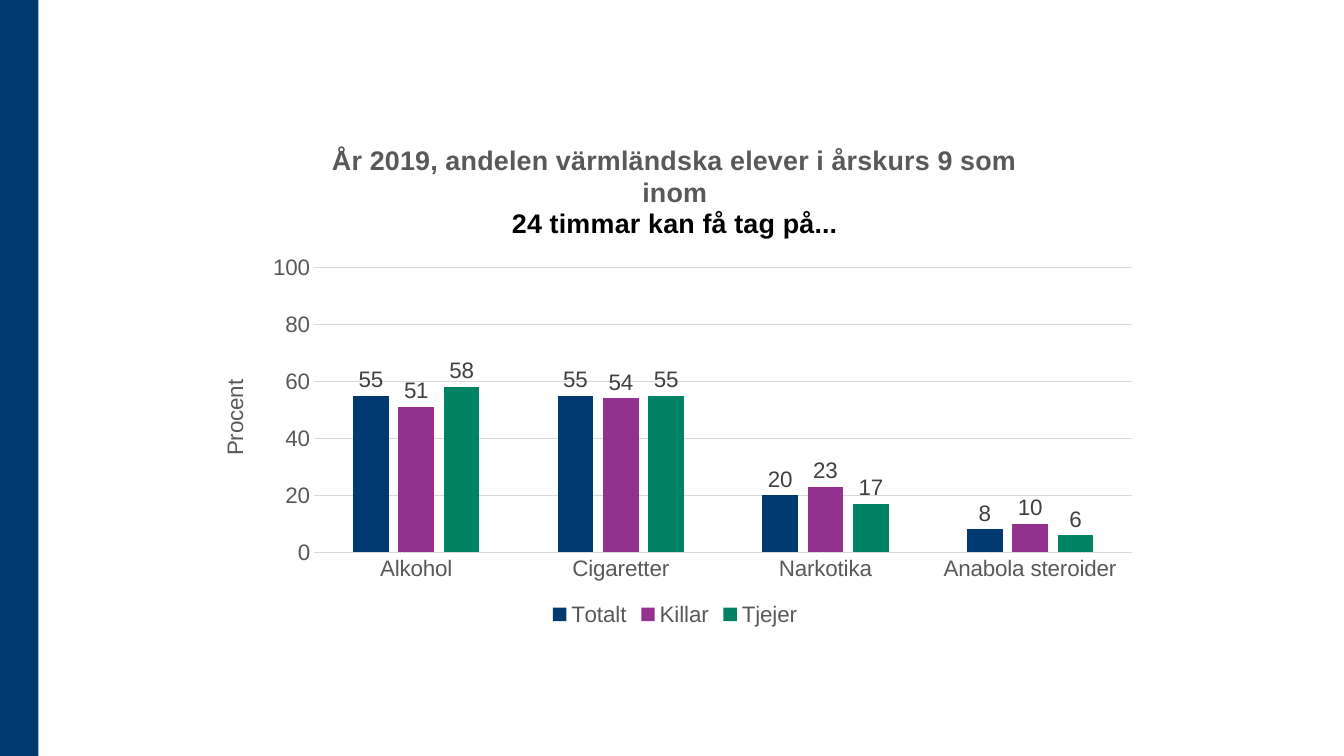
from pptx import Presentation
from pptx.chart import data as chart_data
from pptx.dml import color
from pptx.enum import chart as ch, shapes
from pptx.util import Inches, Pt

NAVY, PURPLE, GREEN = "003A70", "93328E", "008264"
GREY, DARK, PALE, BLACK = "595959", "404040", "D9D9D9", "000000"
CATEGORIES = ["Alkohol", "Cigaretter", "Narkotika", "Anabola steroider"]
SERIES = [
    ("Totalt", NAVY, (55, 55, 20, 8)),
    ("Killar", PURPLE, (51, 54, 23, 10)),
    ("Tjejer", GREEN, (58, 55, 17, 6)),
]


def rgb(value):
    return color.RGBColor.from_string(value)


def style_font(font, size=16, fill=GREY, bold=False):
    font.name = "Arial"
    font.size = Pt(size)
    font.bold = bold
    font.color.rgb = rgb(fill)


def add_text(p, content, **fmt):
    r = p.add_run()
    r.text = content
    style_font(r.font, **fmt)


def set_line(line, fill=PALE):
    line.color.rgb = rgb(fill)
    line.width = Pt(0.75)


def add_side_band(s):
    sp = s.shapes.add_shape(
        shapes.MSO_SHAPE.RECTANGLE, 0, 0, Inches(0.38), Inches(7.5))
    sp.shadow.inherit = False
    sp.fill.solid()
    sp.fill.fore_color.rgb = rgb(NAVY)
    sp.line.fill.background()


def add_title(chart):
    tf = chart.chart_title.text_frame
    add_text(tf.paragraphs[0],
             "År 2019, andelen värmländska elever i årskurs 9 som inom",
             size=19.2, bold=True)
    add_text(tf.add_paragraph(), "24 timmar kan få tag på...",
             size=19.2, fill=BLACK, bold=True)
    chart.chart_title.include_in_layout = False


def style_axes(chart):
    for axis in (chart.category_axis, chart.value_axis):
        axis.major_tick_mark = ch.XL_TICK_MARK.NONE
        axis.minor_tick_mark = ch.XL_TICK_MARK.NONE
        style_font(axis.tick_labels.font)
    set_line(chart.category_axis.format.line)
    values = chart.value_axis
    values.minimum_scale = 0
    values.maximum_scale = 100
    values.major_unit = 20
    values.format.line.fill.background()
    set_line(values.major_gridlines.format.line)
    add_text(values.axis_title.text_frame.paragraphs[0], "Procent")


def style_series(series, fill):
    series.format.fill.solid()
    series.format.fill.fore_color.rgb = rgb(fill)
    series.invert_if_negative = False
    labels = series.data_labels
    labels.show_value = True
    labels.position = ch.XL_LABEL_POSITION.OUTSIDE_END
    style_font(labels.font, fill=DARK)


def add_legend(chart):
    chart.has_legend = True
    chart.legend.position = ch.XL_LEGEND_POSITION.BOTTOM
    chart.legend.include_in_layout = False
    style_font(chart.legend.font)


def add_access_chart(s):
    data = chart_data.CategoryChartData()
    data.categories = CATEGORIES
    for name, _, values in SERIES:
        data.add_series(name, values)
    chart = s.shapes.add_chart(
        ch.XL_CHART_TYPE.COLUMN_CLUSTERED, Inches(1.97), Inches(1.24),
        Inches(9.45), Inches(5.02), data).chart
    style_font(chart.font, fill=BLACK)
    plot = chart.plots[0]
    plot.vary_by_categories = False
    plot.gap_width = 219
    plot.overlap = -27
    add_title(chart)
    style_axes(chart)
    add_legend(chart)
    for series, (_, fill, _) in zip(plot.series, SERIES):
        style_series(series, fill)


def main():
    prs = Presentation()
    prs.slide_width = Inches(13.33)
    prs.slide_height = Inches(7.5)
    s = prs.slides.add_slide(prs.slide_layouts[6])
    add_side_band(s)
    add_access_chart(s)
    prs.save("out.pptx")


if __name__ == "__main__":
    main()
